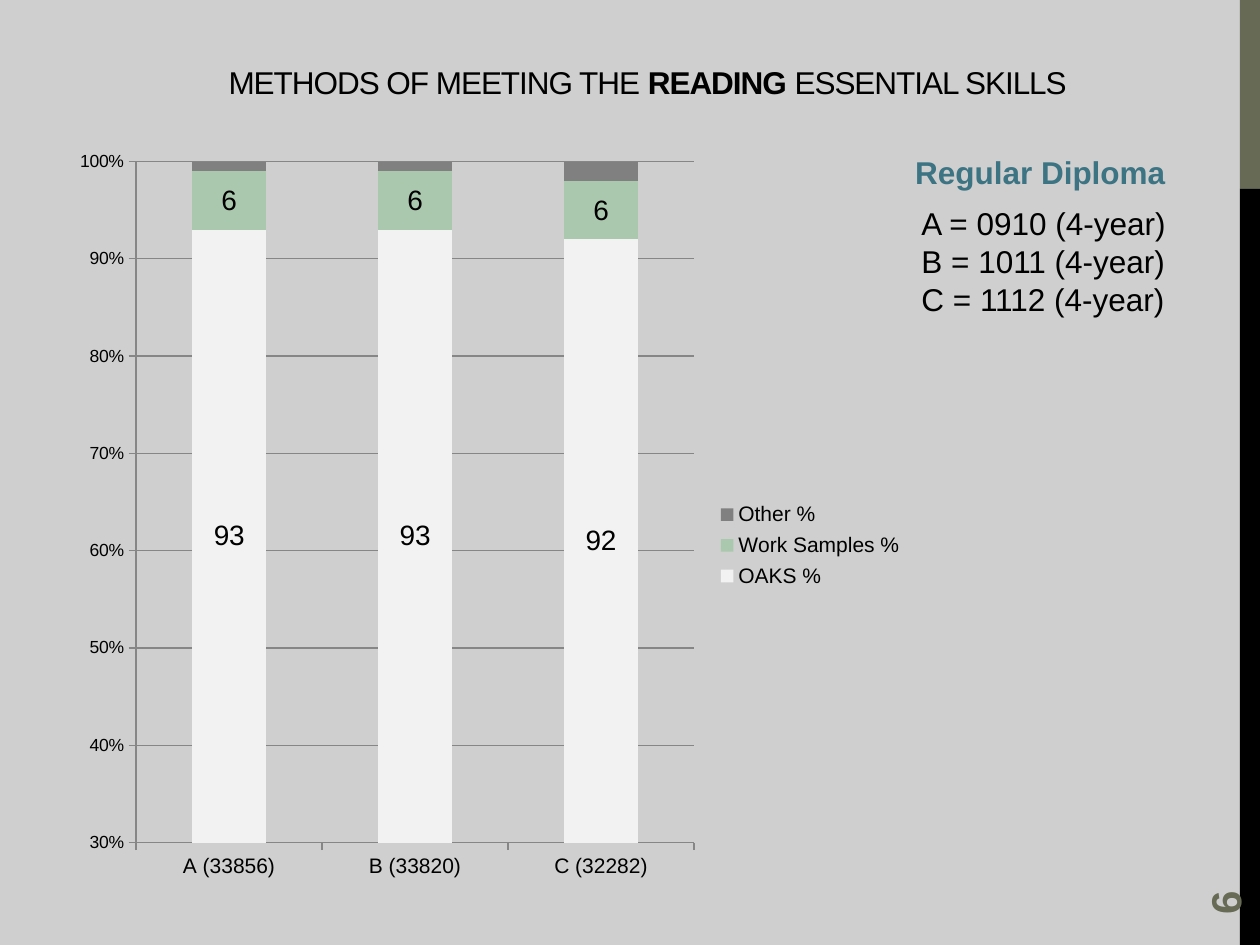
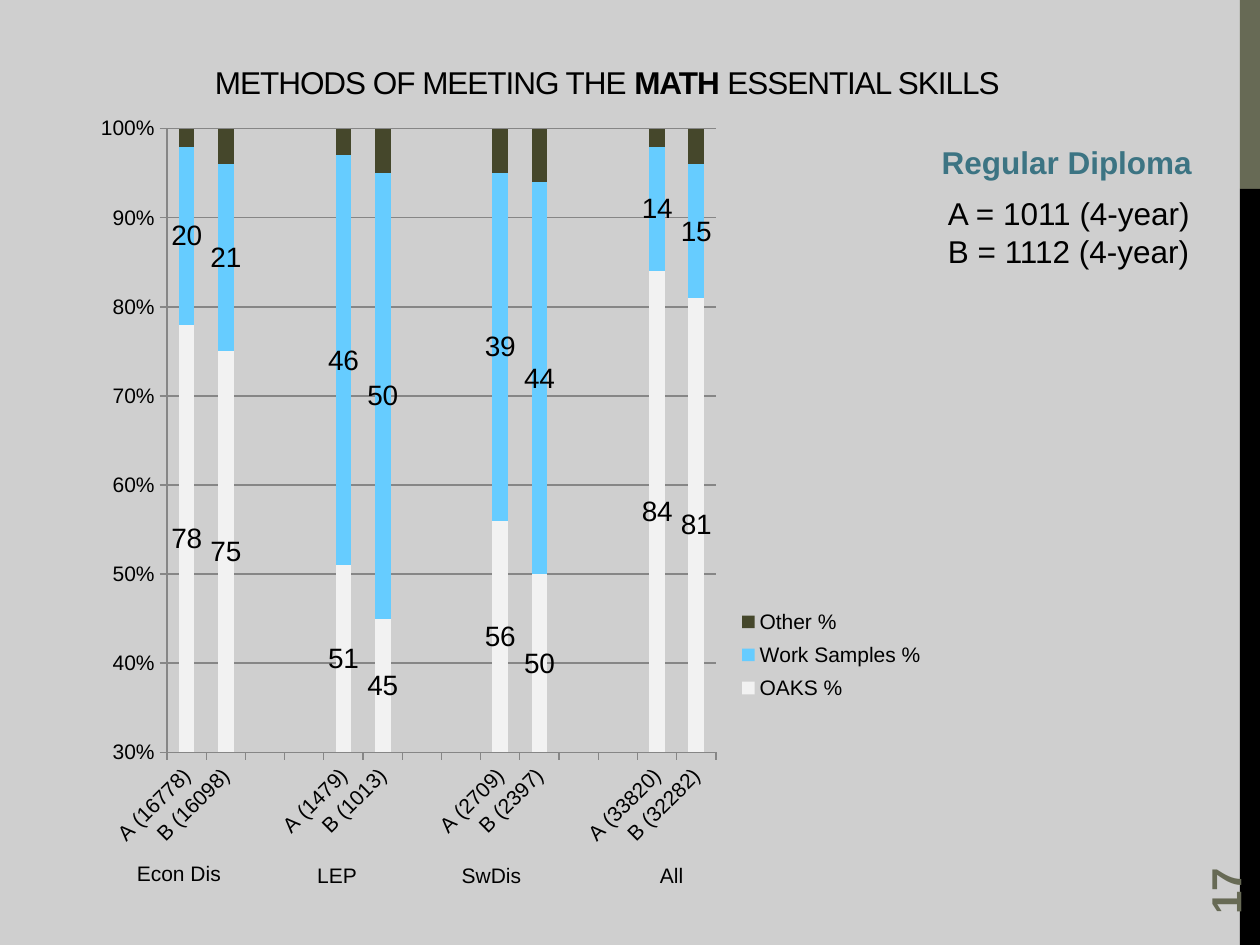
from dataclasses import dataclass
from lxml import etree
from pptx import Presentation
from pptx.chart.data import CategoryChartData
from pptx.dml.color import RGBColor
from pptx.enum.chart import XL_CHART_TYPE as ChartType
from pptx.enum.chart import XL_LABEL_POSITION as LabelPosition
from pptx.enum.chart import XL_LEGEND_POSITION as LegendPosition
from pptx.enum.chart import XL_TICK_MARK as TickMark
from pptx.enum.shapes import MSO_SHAPE as Preset
from pptx.enum.text import MSO_ANCHOR as Anchor
from pptx.enum.text import MSO_AUTO_SIZE as AutoSize
from pptx.enum.text import PP_ALIGN as Align
from pptx.oxml.ns import qn
from pptx.util import Inches, Pt

COLUMNS, ROWS = 100, 75
TITLE_ONLY = 5


@dataclass(frozen=True)
class Theme:
    font: str = "Arial"
    background: str = "CFCFCF"
    ink: str = "000000"
    olive: str = "676A55"
    teal: str = "3C7483"
    grid: str = "868686"
    oaks: str = "F2F2F2"
    sage: str = "AAC8AD"
    gray: str = "808080"
    sky: str = "66CCFF"
    moss: str = "45472B"
    number_size: int = 24
    body_size: int = 18
    value_size: int = 16
    label_size: int = 12
    small_size: int = 10
    title_spacing: int = -60


class Deck:
    def __init__(self, theme):
        self.theme = theme
        self.prs = Presentation()
        self.prs.slide_width, self.prs.slide_height = Inches(10), Inches(7.5)
        self.layout = self.prs.slide_layouts[TITLE_ONLY]
        self.slide = None

    def place(self, left, top, width, height):
        column = self.prs.slide_width / COLUMNS
        row = self.prs.slide_height / ROWS
        return [round(n * unit) for n, unit in
                ((left, column), (top, row), (width, column), (height, row))]

    def style(self, font, size, color=None, bold=False):
        font.name, font.size, font.bold = self.theme.font, Pt(size), bold
        font.color.rgb = RGBColor.from_string(color or self.theme.ink)

    def new_slide(self, number):
        first = self.slide is None
        self.slide = self.prs.slides.add_slide(self.layout)
        if first:
            self.dress_layout()
        page = self.text([str(number)], (90, 64.4, 14.4, 4), self.theme.number_size,
                         self.theme.olive, bold=True, wrap=True, grow=False)
        page.rotation = 270
        page.text_frame.vertical_anchor = Anchor.MIDDLE

    def dress_layout(self):
        fill = self.layout.background.fill
        fill.solid()
        fill.fore_color.rgb = RGBColor.from_string(self.theme.background)
        self.layout_band(0, 15, self.theme.olive)
        self.layout_band(15, 60, self.theme.ink)

    def layout_band(self, top, height, color):
        strip = self.slide.shapes.add_shape(
            Preset.RECTANGLE, *self.place(98.4, top, 1.6, height))
        strip.shadow.inherit = False
        strip.fill.solid()
        strip.fill.fore_color.rgb = RGBColor.from_string(color)
        strip.line.fill.background()
        self.layout.shapes._spTree.append(strip._element)

    def title(self, subject, left):
        heading = self.slide.shapes.title
        heading.left, heading.top, heading.width, heading.height = self.place(
            left, 3.4, 76.2, 5.1)
        frame = heading.text_frame
        frame.auto_size, frame.word_wrap = AutoSize.NONE, True
        frame.vertical_anchor = Anchor.BOTTOM
        paragraph = frame.paragraphs[0]
        paragraph.alignment = Align.CENTER
        for words, bold in (("METHODS OF MEETING THE ", False),
                            (subject + " ", True), ("ESSENTIAL SKILLS", False)):
            run = paragraph.add_run()
            run.text = words
            self.style(run.font, self.theme.body_size, bold=bold)
            run.font._element.set("spc", str(self.theme.title_spacing))

    def text(self, lines, box, size, color=None, bold=False, align=Align.LEFT,
             wrap=False, grow=True):
        caption = self.slide.shapes.add_textbox(*self.place(*box))
        frame = caption.text_frame
        frame.word_wrap = wrap
        frame.auto_size = AutoSize.SHAPE_TO_FIT_TEXT if grow else AutoSize.NONE
        frame.text = "\n".join(lines)
        for paragraph in frame.paragraphs:
            paragraph.alignment = align
            for run in paragraph.runs:
                self.style(run.font, size, color, bold)
        return caption

    def cohorts(self, left, top, years):
        size = self.theme.body_size
        self.text(["Regular Diploma"], (left, top, 22.1, 4), size,
                  self.theme.teal, bold=True)
        lines = [f"{letter} = {year} (4-year)" for letter, year in zip("ABC", years)]
        self.text(lines, (left + 0.5, top + 4.05, 21.6, 1 + 3.03 * len(lines)), size)

    def chart(self, box, categories, shares, colors, plot_box, legend_box,
              value_axis_size, label_angle=0):
        theme = self.theme
        data = CategoryChartData(number_format="0")
        data.categories = categories
        for name, values in zip(("OAKS %", "Work Samples %", "Other %"), shares):
            data.add_series(name, values)
        chart = self.slide.shapes.add_chart(
            ChartType.COLUMN_STACKED_100, *self.place(*box), data).chart
        chart.has_title = False
        self.style(chart.font, theme.small_size)

        plot = chart.plots[0]
        plot.gap_width, plot.overlap, plot.vary_by_categories = 150, 100, False
        for series, color in zip(plot.series, colors):
            series.format.fill.solid()
            series.format.fill.fore_color.rgb = RGBColor.from_string(color)
        for series in list(plot.series)[:2]:
            labels = series.data_labels
            labels.show_value = True
            labels.number_format, labels.number_format_is_linked = "0", False
            labels.position = LabelPosition.CENTER
            self.style(labels.font, theme.value_size)

        scale = chart.value_axis
        scale.minimum_scale, scale.maximum_scale, scale.major_unit = 0.3, 1, 0.1
        scale.tick_labels.number_format = "0%"
        scale.tick_labels.number_format_is_linked = False
        scale.has_major_gridlines = True
        self.rule(scale.major_gridlines)
        for axis, size in ((scale, value_axis_size),
                           (chart.category_axis, theme.label_size)):
            axis.major_tick_mark, axis.minor_tick_mark = TickMark.OUTSIDE, TickMark.NONE
            self.rule(axis)
            self.style(axis.tick_labels.font, size)
        if label_angle:
            body = chart.category_axis._element.find(qn("c:txPr")).find(qn("a:bodyPr"))
            body.set("rot", str(label_angle * 60000))
            body.set("vert", "horz")

        chart.has_legend = True
        chart.legend.position = LegendPosition.RIGHT
        chart.legend.include_in_layout = False
        self.style(chart.legend.font, theme.label_size)
        area = chart._chartSpace.chart.plotArea
        self.arrange(area, 0, plot_box, inner=True)
        self.arrange(chart.legend._element, 1, legend_box)

    def rule(self, part):
        part.format.line.color.rgb = RGBColor.from_string(self.theme.grid)
        part.format.line.width = Pt(0.75)

    def arrange(self, part, index, percents, inner=False):
        for previous in part.findall(qn("c:layout")):
            part.remove(previous)
        layout = etree.Element(qn("c:layout"))
        manual = etree.SubElement(layout, qn("c:manualLayout"))
        settings = [("layoutTarget", "inner")] if inner else []
        settings += [("xMode", "edge"), ("yMode", "edge")]
        settings += [(side, percent / 100) for side, percent in zip("xywh", percents)]
        for tag, value in settings:
            etree.SubElement(manual, qn("c:" + tag)).set("val", str(value))
        part.insert(index, layout)


def reading_slide(deck):
    theme = deck.theme
    deck.new_slide(6)
    deck.title("READING", 13.3)
    deck.cohorts(71.65, 11.65, ("0910", "1011", "1112"))
    deck.chart((5, 10.8, 67.5, 60), ("A (33856)", "B (33820)", "C (32282)"),
               ((93, 93, 92), (6, 6, 6), (1, 1, 2)),
               (theme.oaks, theme.sage, theme.gray),
               (8.6, 3.37, 65.6, 90.1), (76.35, 47.5, 23, 13.3), theme.small_size)


def math_slide(deck):
    theme = deck.theme
    groups = (
        ("Econ Dis", 9.2, 67.8, 10, ((16778, 78, 20, 2), (16098, 75, 21, 4))),
        ("LEP", 23.4, 68, 6.7, ((1479, 51, 46, 3), (1013, 45, 50, 5))),
        ("SwDis", 34.9, 68, 8.2, ((2709, 56, 39, 5), (2397, 50, 44, 6))),
        ("All", 49.7, 68, 7.2, ((33820, 84, 14, 2), (32282, 81, 15, 4))),
    )
    columns = []
    for *_, cohorts in groups:
        if columns:
            columns += [("", None, None, None)] * 2
        columns += [(f"{letter} ({count})", *shares)
                    for letter, (count, *shares) in zip("AB", cohorts)]
    categories, *shares = zip(*columns)

    deck.new_slide(17)
    deck.title("MATH", 10.1)
    deck.chart((6.7, 8.1, 67.6, 60.2), categories, shares,
               (theme.oaks, theme.sky, theme.moss),
               (9.7, 3.53, 64.45, 82.2), (76.2, 65.65, 23, 14.5),
               theme.label_size, label_angle=-45)
    for name, left, top, width, _ in groups:
        deck.text([name], (left, top, width, 3), theme.label_size,
                  align=Align.CENTER, wrap=True)
    deck.cohorts(73.75, 10.85, ("1011", "1112"))


def main():
    deck = Deck(Theme())
    reading_slide(deck)
    math_slide(deck)
    deck.prs.save("out.pptx")


if __name__ == "__main__":
    main()
